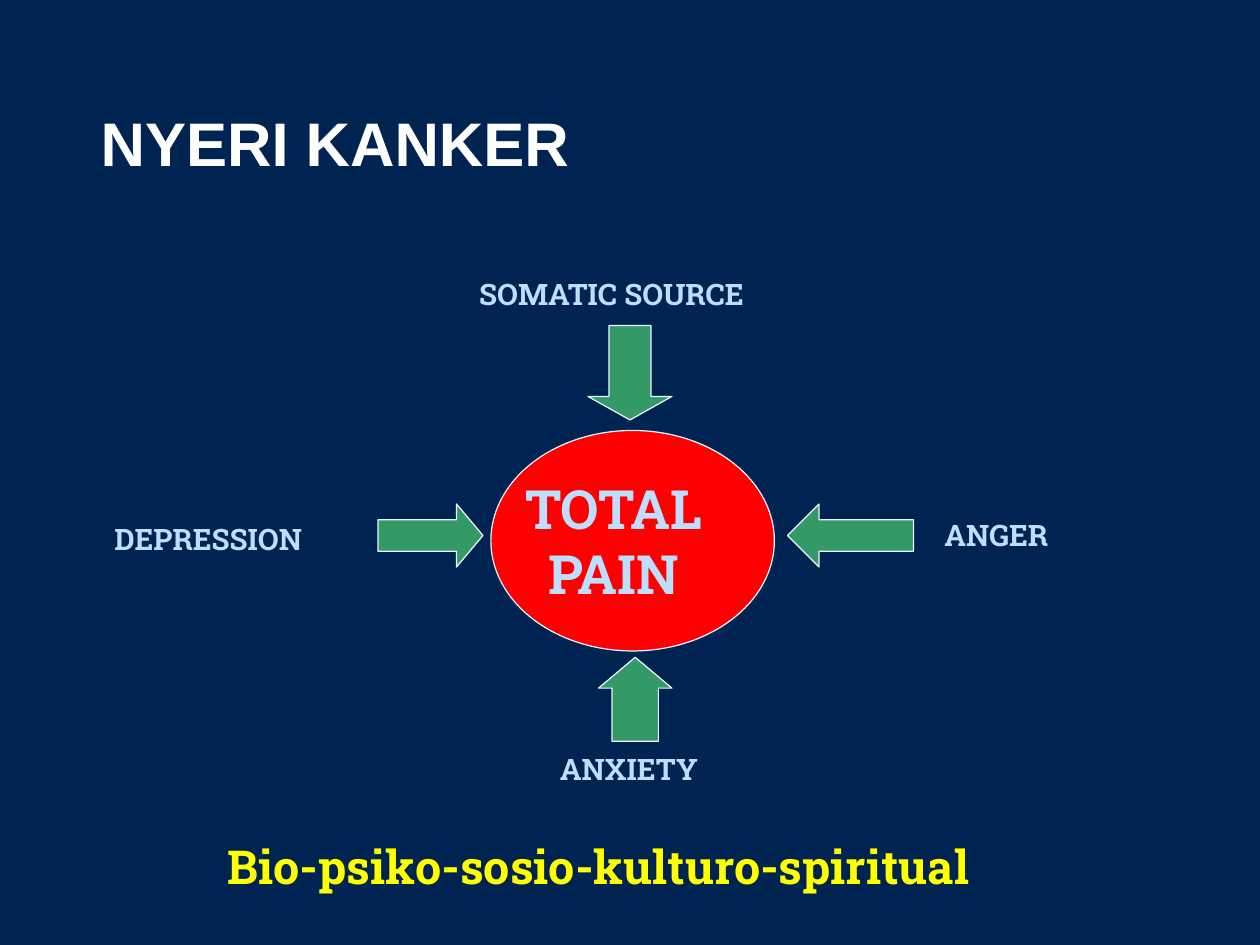
from pptx import Presentation
from pptx.dml.color import RGBColor
from pptx.enum.shapes import MSO_SHAPE as Shape
from pptx.enum.text import MSO_ANCHOR as Anchor, MSO_AUTO_SIZE as AutoSize, PP_ALIGN as Align
from pptx.util import Inches, Pt

NAVY, WHITE, RED, GREEN = "002452", "FFFFFF", "FF0000", "339966"
PALE_BLUE, OUTLINE, YELLOW = "BDDEFF", "EBF5FF", "FFFF00"
COLUMNS, ROWS = 48, 36


def color(value):
    return RGBColor.from_string(value)


class PainSlide:
    heading_font = "Arial"
    body_font = "Roboto Slab"
    inset = Inches(0.07)

    def __init__(self, presentation):
        self.column = presentation.slide_width / COLUMNS
        self.row = presentation.slide_height / ROWS
        self.slide = presentation.slides.add_slide(presentation.slide_layouts[5])
        background = self.slide.background.fill
        background.solid()
        background.fore_color.rgb = color(NAVY)

    def box(self, left, top, width, height):
        return (round(left * self.column), round(top * self.row),
                round(width * self.column), round(height * self.row))

    def set_text(self, shape, lines, size, ink, font, align, anchor):
        frame = shape.text_frame
        frame.text = "\n".join(lines)
        frame.word_wrap = True
        frame.auto_size = AutoSize.NONE
        frame.vertical_anchor = anchor
        frame.margin_left = frame.margin_right = self.inset
        frame.margin_top = frame.margin_bottom = self.inset
        for paragraph in frame.paragraphs:
            paragraph.alignment = align
            paragraph.font.name = font
            paragraph.font.size = Pt(size)
            paragraph.font.bold = True
            paragraph.font.color.rgb = color(ink)

    def title(self, text, *cells):
        shape = self.slide.shapes.title
        shape.left, shape.top, shape.width, shape.height = self.box(*cells)
        self.set_text(shape, [text], 50, WHITE, self.heading_font, Align.LEFT, Anchor.MIDDLE)

    def text(self, lines, *cells, size=24, ink=PALE_BLUE, align=Align.LEFT, anchor=Anchor.TOP):
        shape = self.slide.shapes.add_textbox(*self.box(*cells))
        self.set_text(shape, lines, size, ink, self.body_font, align, anchor)

    def figure(self, kind, fill, *cells, adjustments=()):
        shape = self.slide.shapes.add_shape(kind, *self.box(*cells))
        shape.shadow.inherit = False
        shape.fill.solid()
        shape.fill.fore_color.rgb = color(fill)
        shape.line.color.rgb = color(OUTLINE)
        shape.line.width = Pt(1)
        for index, value in enumerate(adjustments):
            shape.adjustments[index] = value


def main():
    presentation = Presentation()
    presentation.slide_width = Inches(14.22)
    presentation.slide_height = Inches(10.67)
    pain = PainSlide(presentation)

    pain.title("NYERI KANKER", 3.6, 3.6, 40.8, 3.6)
    pain.figure(Shape.OVAL, RED, 18.7, 16.4, 10.8, 8.4)
    pain.text(["TOTAL", "PAIN"], 19.4, 17.95, 7.95, 5.26,
              size=44, align=Align.CENTER, anchor=Anchor.MIDDLE)

    for label, left, top, width in (
        ("SOMATIC SOURCE", 18.02, 10.29, 11.47),
        ("ANGER", 35.74, 19.44, 4.8),
        ("DEPRESSION", 4.12, 19.6, 8.3),
        ("ANXIETY", 21.09, 28.38, 6),
    ):
        pain.text([label], left, top, width, 1.86)

    for kind, cells, adjustments in (
        (Shape.DOWN_ARROW, (22.4, 12.4, 3.2, 3.6), (0.5, 0.28)),
        (Shape.RIGHT_ARROW, (14.4, 19.2, 4, 2.4), (0.5, 0.42)),
        (Shape.LEFT_ARROW, (30, 19.2, 4.8, 2.4), (0.5, 0.5)),
        (Shape.UP_ARROW, (22.8, 25.04, 2.8, 3.2), (0.63, 0.42)),
    ):
        pain.figure(kind, GREEN, *cells, adjustments=adjustments)

    pain.text(["Bio-psiko-sosio-kulturo-spiritual"], 8.44, 31.69, 30.48, 2.6,
              size=38, ink=YELLOW)
    presentation.save("out.pptx")


if __name__ == "__main__":
    main()
